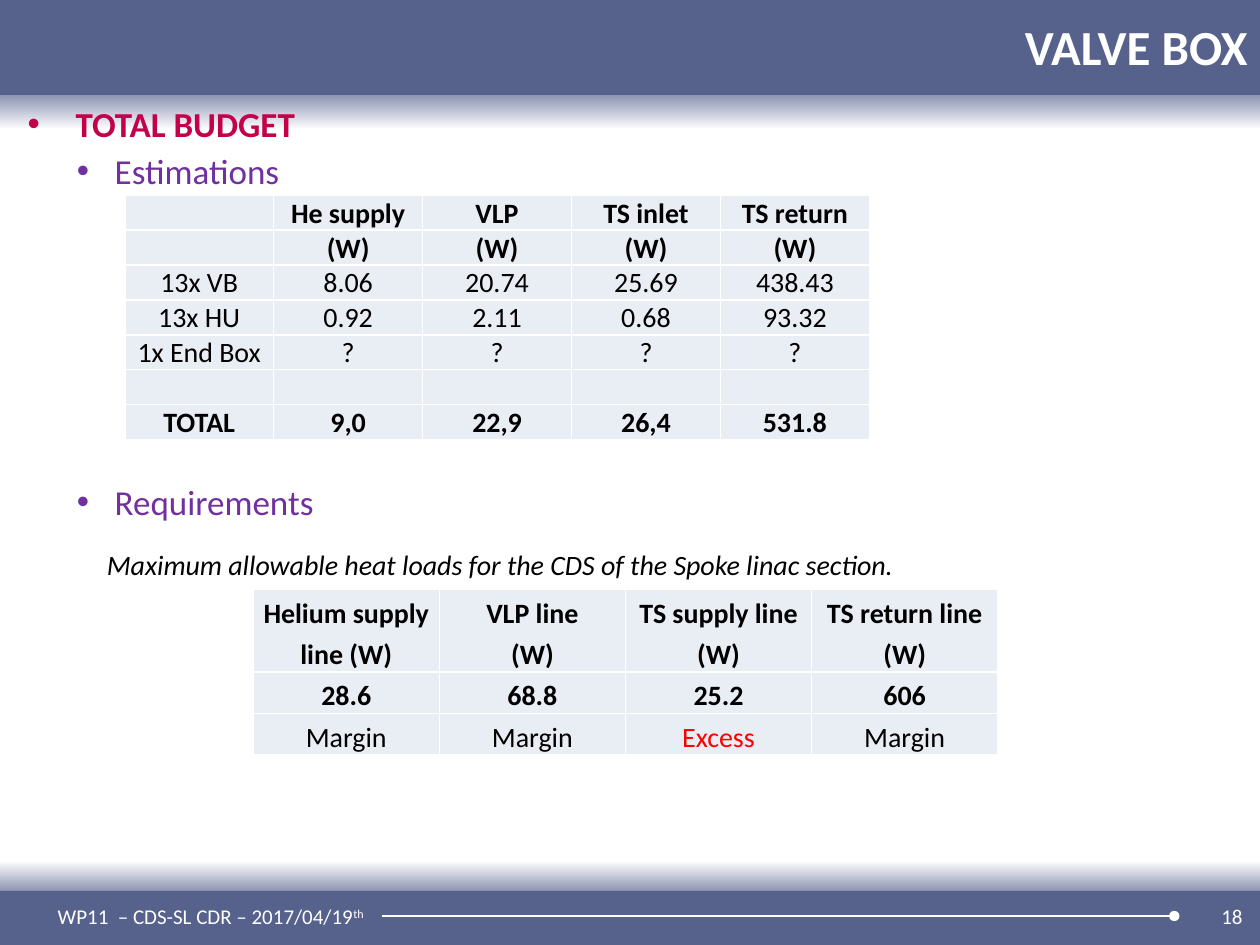
from pptx import Presentation
from pptx.dml.color import RGBColor as RGB
from pptx.enum.shapes import MSO_CONNECTOR as LINE, MSO_SHAPE as SHAPE
from pptx.enum.text import MSO_ANCHOR as ANCHOR, MSO_AUTO_SIZE as FIT, PP_ALIGN as ALIGN
from pptx.oxml.xmlchemy import OxmlElement as Element
from pptx.util import Inches, Pt

COLORS = {"bar": "56628C", "shade": "8E96B4", "white": "FFFFFF", "black": "000000",
          "cell": "E9EDF4", "heading": "C3004A", "item": "7030A0", "alert": "FF0000"}
FONT = "Calibri"
COLS, ROWS = 100, 75


def grid(n):
    return Inches(n / 10)


def color(name):
    return RGB.from_string(COLORS[name])


def child(parent, tag, **attributes):
    element = Element(tag)
    for key, value in attributes.items():
        element.set(key, str(value))
    parent.append(element)
    return element


def add_run(p, text, size, ink, bold=False, italic=False):
    r = p.add_run()
    r.text = text
    r.font.name, r.font.size = FONT, Pt(size)
    r.font.bold, r.font.italic = bold, italic
    r.font.color.rgb = color(ink)
    return r


def place(sp, box):
    sp.left, sp.top, sp.width, sp.height = map(grid, box)


def add_band(s, box, angle=None):
    sp = s.shapes.add_shape(SHAPE.RECTANGLE, *map(grid, box))
    sp.shadow.inherit = False
    sp.line.fill.background()
    if angle is None:
        sp.fill.solid()
        sp.fill.fore_color.rgb = color("bar")
    else:
        sp.fill.gradient()
        sp.fill.gradient_angle = angle
        for stop, name in zip(sp.fill.gradient_stops, ("shade", "white")):
            stop.color.rgb = color(name)
    s.shapes._spTree.insert(2, sp._element)


def add_label(s, box, align=ALIGN.LEFT):
    tf = s.shapes.add_textbox(*map(grid, box)).text_frame
    tf.word_wrap, tf.vertical_anchor = True, ANCHOR.MIDDLE
    p = tf.paragraphs[0]
    p.alignment = align
    return p


def add_header(s, box, title):
    x, y, w, h = box
    add_band(s, box)
    add_band(s, (x, y + h, w, 2.7), 270)
    sp = s.shapes.title
    place(sp, (x + 10.6, y - 0.3, w - 10.6, h + 0.3))
    tf = sp.text_frame
    tf.auto_size, tf.vertical_anchor = FIT.NONE, ANCHOR.MIDDLE
    p = tf.paragraphs[0]
    p.alignment = ALIGN.RIGHT
    add_run(p, title, 28, "white", bold=True)


def add_footer(s, box, text, suffix, number):
    x, y, w, h = box
    add_band(s, box)
    add_band(s, (x, y - 2.4, w, 2.4), 90)
    middle = y + 2
    rule = s.shapes.add_connector(LINE.STRAIGHT, *map(grid, (x + 30.3, middle, x + 93.2, middle)))
    rule.line.color.rgb = color("white")
    rule.line.width = Pt(1.5)
    child(rule.line._get_or_add_ln(), "a:tailEnd", type="oval")
    child(rule._element.spPr, "a:effectLst")
    p = add_label(s, (x + 3.6, y, 35.3, 4))
    add_run(p, text, 12, "white")
    r = add_run(p, suffix, 12, "white")
    r.font._element.set("baseline", "30000")
    p = add_label(s, (x + w - 23.7, y, 23.3, 4), ALIGN.RIGHT)
    add_run(p, number, 12, "white")


def add_outline(s, box, items):
    sp = s.placeholders[1]
    place(sp, box)
    tf = sp.text_frame
    tf.auto_size, tf.vertical_anchor = FIT.NONE, ANCHOR.TOP
    tf.margin_left = tf.margin_right = tf.margin_bottom = grid(0.2)
    tf.margin_top = grid(0.5)
    for i, (text, level, before) in enumerate(items):
        p = tf.add_paragraph() if i else tf.paragraphs[0]
        p.level, p.space_before = level, Pt(before)
        indent, hanging = ((3.8, 3.8), (6.9, 3))[level]
        pPr = p._p.get_or_add_pPr()
        pPr.set("marL", str(grid(indent)))
        pPr.set("indent", str(-grid(hanging)))
        child(pPr, "a:buFont", typeface="Arial")
        child(pPr, "a:buChar", char="•")
        add_run(p, text, 20, "item" if level else "heading", bold=not level)


def fill_cell(cell, text, bold, margin, spacing):
    tcPr = cell._tc.get_or_add_tcPr()
    for side in "LRTB":
        ln = child(tcPr, f"a:ln{side}", w=Pt(1))
        child(child(ln, "a:solidFill"), "a:srgbClr", val=COLORS["white"])
    cell.fill.solid()
    cell.fill.fore_color.rgb = color("cell")
    cell.margin_left = cell.margin_right = cell.margin_top = grid(margin)
    cell.margin_bottom = 0
    cell.vertical_anchor = ANCHOR.BOTTOM
    for i, line in enumerate(text.split("\n")):
        p = cell.text_frame.add_paragraph() if i else cell.text_frame.paragraphs[0]
        p.alignment, p.line_spacing = ALIGN.CENTER, spacing
        if line:
            add_run(p, line, 16, "alert" if line == "Excess" else "black", bold)
        else:
            child(p._p, "a:endParaRPr", sz=1600)


def add_grid_table(s, box, rows, weights, bold_rows, margin=0, spacing=1.0):
    x, y, w, h = box
    table = s.shapes.add_table(len(rows), len(rows[0]), *map(grid, box)).table
    table.first_row = table.horz_banding = False
    for column in table.columns:
        column.width = grid(w / len(rows[0]))
    for i, (values, weight) in enumerate(zip(rows, weights)):
        table.rows[i].height = grid(h * weight / sum(weights))
        for j, text in enumerate(values):
            fill_cell(table.cell(i, j), text, i in bold_rows, margin, spacing)


def add_estimations(s, box):
    rows = [("", "He supply", "VLP", "TS inlet", "TS return"),
            ("",) + ("(W)",) * 4,
            ("13x VB", "8.06", "20.74", "25.69", "438.43"),
            ("13x HU", "0.92", "2.11", "0.68", "93.32"),
            ("1x End Box",) + ("?",) * 4,
            ("",) * 5,
            ("TOTAL", "9,0", "22,9", "26,4", "531.8")]
    add_grid_table(s, box, rows, [1] * len(rows), (0, 1, 6), margin=0.1)


def add_requirements(s, box):
    x, y, w, h = box
    p = add_label(s, (x, y, w, 3.7))
    add_run(p, "Maximum allowable heat loads for the CDS of the Spoke linac section.",
            16, "black", italic=True)
    rows = [("Helium supply line (W)", "VLP line\n(W)", "TS supply line\n(W)", "TS return line\n(W)"),
            ("28.6", "68.8", "25.2", "606"),
            ("Margin", "Margin", "Excess", "Margin")]
    add_grid_table(s, (x + 12.6, y + 3.9, 59.1, h - 3.9), rows, (2, 1, 1), (0, 1), spacing=1.2)


def main():
    prs = Presentation()
    prs.slide_width, prs.slide_height = grid(COLS), grid(ROWS)
    s = prs.slides.add_slide(prs.slide_layouts[1])
    add_header(s, (0, 0, COLS, 7.6), "VALVE BOX")
    add_footer(s, (0, 70.7, COLS, 4.3), "WP11  – CDS-SL CDR – 2017/04/19", "th", "18")
    add_outline(s, (2, 7.6, 98, 63.2),
                [("TOTAL BUDGET", 0, 0), ("Estimations", 1, 3), ("Requirements", 1, 165)])
    add_estimations(s, (9.9, 15.5, 59.1, 19.3))
    add_requirements(s, (7.5, 42.9, 77.2, 17))
    prs.save("out.pptx")


if __name__ == "__main__":
    main()
